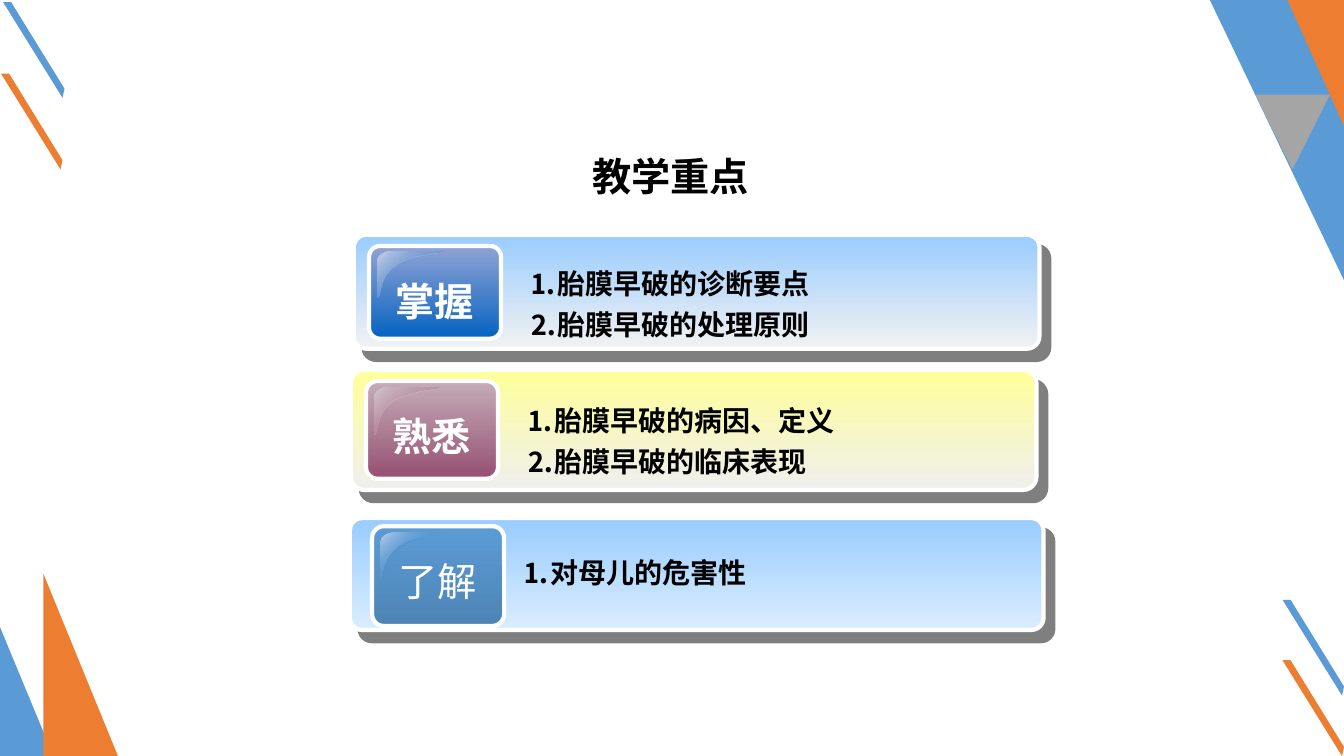
"""Build the teaching focus slide with three graded topic panels."""
from pptx import Presentation
from pptx.dml.color import RGBColor
from pptx.enum.shapes import MSO_SHAPE as SHAPE
from pptx.enum.text import MSO_ANCHOR as ANCHOR, MSO_AUTO_SIZE as AUTO, PP_ALIGN as ALIGN
from pptx.oxml import parse_xml
from pptx.oxml.ns import nsdecls, qn
from pptx.util import Inches, Pt

BLUE = RGBColor(0x5B, 0x9B, 0xD5)
ORANGE = RGBColor(0xED, 0x7D, 0x31)
GRAY = RGBColor(0xA5, 0xA5, 0xA5)
WHITE = RGBColor(0xFF, 0xFF, 0xFF)
BLACK = RGBColor(0, 0, 0)
SKY = RGBColor(0x99, 0xCC, 0xFF)
PALE_GRAY = RGBColor(0xF2, 0xF2, 0xF2)
YELLOW = RGBColor(0xFF, 0xFF, 0x99)
SILVER = RGBColor(0xEF, 0xEF, 0xEF)
PALE_SKY = RGBColor(0xDA, 0xED, 0xFF)
LAVENDER = RGBColor(0x91, 0xA3, 0xD4)
ROYAL = RGBColor(0x05, 0x63, 0xC1)
MIST = RGBColor(0xC9, 0xD0, 0xE7)
ROSE = RGBColor(0xC5, 0xAD, 0xB7)
PLUM = RGBColor(0x95, 0x4F, 0x72)
BLUSH = RGBColor(0xD4, 0xC4, 0xCB)
STEEL = RGBColor(0x4E, 0x85, 0xB6)
ICE = RGBColor(0xBE, 0xD0, 0xE9)
CJK = "Noto Sans CJK SC"

TITLE = "教学重点"
PANELS = [
    {"label": "掌握", "bold": True, "items": ["⒈胎膜早破的诊断要点", "⒉胎膜早破的处理原则"],
     "bar": (3.51, 2.33, 6.8, 1.13), "bar_stops": [(0, SKY, 100), (100, PALE_GRAY, 100)],
     "tile": (3.66, 2.44, 1.31, 0.92), "tile_stops": [(0, LAVENDER, 100), (100, ROYAL, 100)],
     "gloss_stops": [(0, MIST, 100), (100, ROYAL, 0)],
     "list": (5.15, 2.53, 5, 0.91), "spacing": 1.2},
    {"label": "熟悉", "bold": True, "items": ["⒈胎膜早破的病因、定义", "⒉胎膜早破的临床表现"],
     "bar": (3.48, 3.67, 6.8, 1.19), "bar_stops": [(0, YELLOW, 100), (100, SILVER, 100)],
     "tile": (3.63, 3.78, 1.31, 0.97), "tile_stops": [(0, ROSE, 100), (100, PLUM, 100)],
     "gloss_stops": [(0, BLUSH, 100), (100, PLUM, 0)],
     "list": (5.12, 3.89, 5, 0.91), "spacing": 1.2},
    {"label": "了解", "bold": False, "items": ["⒈对母儿的危害性"],
     "bar": (3.47, 5.14, 6.88, 1.11), "bar_stops": [(0, SKY, 100), (100, PALE_SKY, 100)],
     "tile": (3.69, 5.22, 1.31, 0.99), "tile_stops": [(0, BLUE, 100), (100, STEEL, 100)],
     "gloss_stops": [(0, ICE, 100), (50, BLUE, 0), (100, ICE, 100)],
     "list": (5.08, 5.46, 6.31, 0.44), "spacing": 1.0},
]

STRIPE = [(0, 0), (0.08, 0), (0.61, 0.86), (0.59, 0.95)]
STRIPES = [(12.72, 5.95, BLUE), (0.01, 0.73, ORANGE), (0.03, 0.02, BLUE), (12.72, 6.55, ORANGE)]
CORNERS = [
    ([(12, 0), (13.33, 0), (13.33, 2.78)], BLUE),
    ([(12.77, 0), (13.33, 0), (13.33, 1.25)], ORANGE),
    ([(13.19, 0.94), (12.82, 1.68), (12.45, 0.94)], GRAY),
]
WEDGES = [((0, 6.22, 0.53, 1.28), BLUE), ((0.43, 5.69, 0.74, 1.81), ORANGE)]

GLOSS_CURVES = [
    [(0.2, 0), (0.09, 0), (0, 0.09), (0, 0.2)],
    [(0, 0.98), (0.05, 1), (0.02, 0.52), (0.28, 0.29)],
    [(0.28, 0.29), (0.52, 0.06), (1.01, 0.05), (1, 0)],
]


def inches(box):
    return [Inches(v) for v in box]


def bezier(curve, steps=10):
    for i in range(steps + 1):
        t = i / steps
        weights = ((1 - t) ** 3, 3 * t * (1 - t) ** 2, 3 * t * t * (1 - t), t ** 3)
        yield tuple(sum(w * pt[axis] for w, pt in zip(weights, curve)) for axis in (0, 1))


def polygon(shapes, points):
    start, *rest = [inches(pt) for pt in points]
    builder = shapes.build_freeform(*start, scale=1.0)
    builder.add_line_segments(rest, close=True)
    sp = builder.convert_to_shape()
    sp.shadow.inherit = False
    sp.line.fill.background()
    return sp


def paint(sp, color):
    sp.shadow.inherit = False
    sp.line.fill.background()
    sp.fill.solid()
    sp.fill.fore_color.rgb = color


def gradient(sp, stops, angle):
    gs = "".join(
        f'<a:gs pos="{pos * 1000}"><a:srgbClr val="{color}"><a:alpha val="{alpha * 1000}"/>'
        f'</a:srgbClr></a:gs>' for pos, color, alpha in stops)
    sp.fill.background()
    props = sp.element.spPr
    props.replace(props.find(qn("a:noFill")), parse_xml(
        f'<a:gradFill {nsdecls("a")} rotWithShape="1"><a:gsLst>{gs}</a:gsLst>'
        f'<a:lin ang="{angle * 60000}" scaled="0"/></a:gradFill>'))


def rounded(shapes, box, adj, stops):
    sp = shapes.add_shape(SHAPE.ROUNDED_RECTANGLE, *inches(box))
    sp.shadow.inherit = False
    sp.adjustments[0] = adj
    gradient(sp, stops, 90)
    sp.line.color.rgb = WHITE
    sp.line.width = Pt(3)
    return sp


def drop_shadow(sp):
    sp.element.spPr.find(qn("a:effectLst")).append(parse_xml(
        f'<a:outerShdw {nsdecls("a")} blurRad="0" dist="{Pt(10.6)}" dir="{49 * 60000}" '
        f'algn="ctr" rotWithShape="0"><a:srgbClr val="{BLACK}"><a:alpha val="50000"/>'
        f'</a:srgbClr></a:outerShdw>'))


def write(tf, lines, color, font, spacing=1.0, align=ALIGN.LEFT):
    for i, line in enumerate(lines):
        p = tf.add_paragraph() if i else tf.paragraphs[0]
        p.line_spacing, p.alignment = spacing, align
        r = p.add_run()
        r.text = line
        for key, value in font.items():
            setattr(r.font, key, value)
        r.font.color.rgb = color
        rPr = r.font._element
        rPr.set("lang", "zh-CN")
        rPr.find(qn("a:latin")).addnext(
            parse_xml(f'<a:ea {nsdecls("a")} typeface="{CJK}"/>'))


def text_box(shapes, box, wrap):
    tf = shapes.add_textbox(*inches(box)).text_frame
    tf.word_wrap = wrap
    tf.auto_size = AUTO.SHAPE_TO_FIT_TEXT
    return tf


def add_panel(s, panel):
    shapes = s.shapes.add_group_shape().shapes
    drop_shadow(rounded(shapes, panel["bar"], 0.109, panel["bar_stops"]))
    rounded(shapes, panel["tile"], 0.119, panel["tile_stops"])
    x, y, _, h = panel["tile"]
    points = [(x + 0.08 + 0.65 * u, y + 0.06 + 0.5 * h * v)
              for curve in GLOSS_CURVES for u, v in bezier(curve)]
    gradient(polygon(shapes, points), panel["gloss_stops"], 45)
    write(text_box(shapes, (x + 0.16, y + 0.26, 0.98, 0.57), False), [panel["label"]],
          WHITE, {"name": "Arial", "size": Pt(28), "bold": panel["bold"]})
    write(text_box(shapes, panel["list"], True), panel["items"], BLACK,
          {"name": CJK, "size": Pt(20), "bold": True}, panel["spacing"])


def main():
    prs = Presentation()
    prs.slide_width, prs.slide_height = Inches(13.33), Inches(7.5)
    s = prs.slides.add_slide(prs.slide_layouts[5])
    for x, y, color in STRIPES:
        paint(polygon(s.shapes, [(x + dx, y + dy) for dx, dy in STRIPE]), color)
    for points, color in CORNERS:
        paint(polygon(s.shapes, points), color)
    for box, color in WEDGES:
        sp = s.shapes.add_shape(SHAPE.ISOSCELES_TRIANGLE, *inches(box))
        sp.adjustments[0] = 0
        paint(sp, color)
    for panel in PANELS:
        add_panel(s, panel)
    title = s.shapes.title
    title.left, title.top, title.width, title.height = inches((2.97, 1.23, 7.36, 1.02))
    tf = title.text_frame
    tf.vertical_anchor = ANCHOR.MIDDLE
    write(tf, [TITLE], BLACK, {"name": CJK, "size": Pt(28), "bold": True}, align=ALIGN.CENTER)
    prs.save("out.pptx")


if __name__ == "__main__":
    main()
